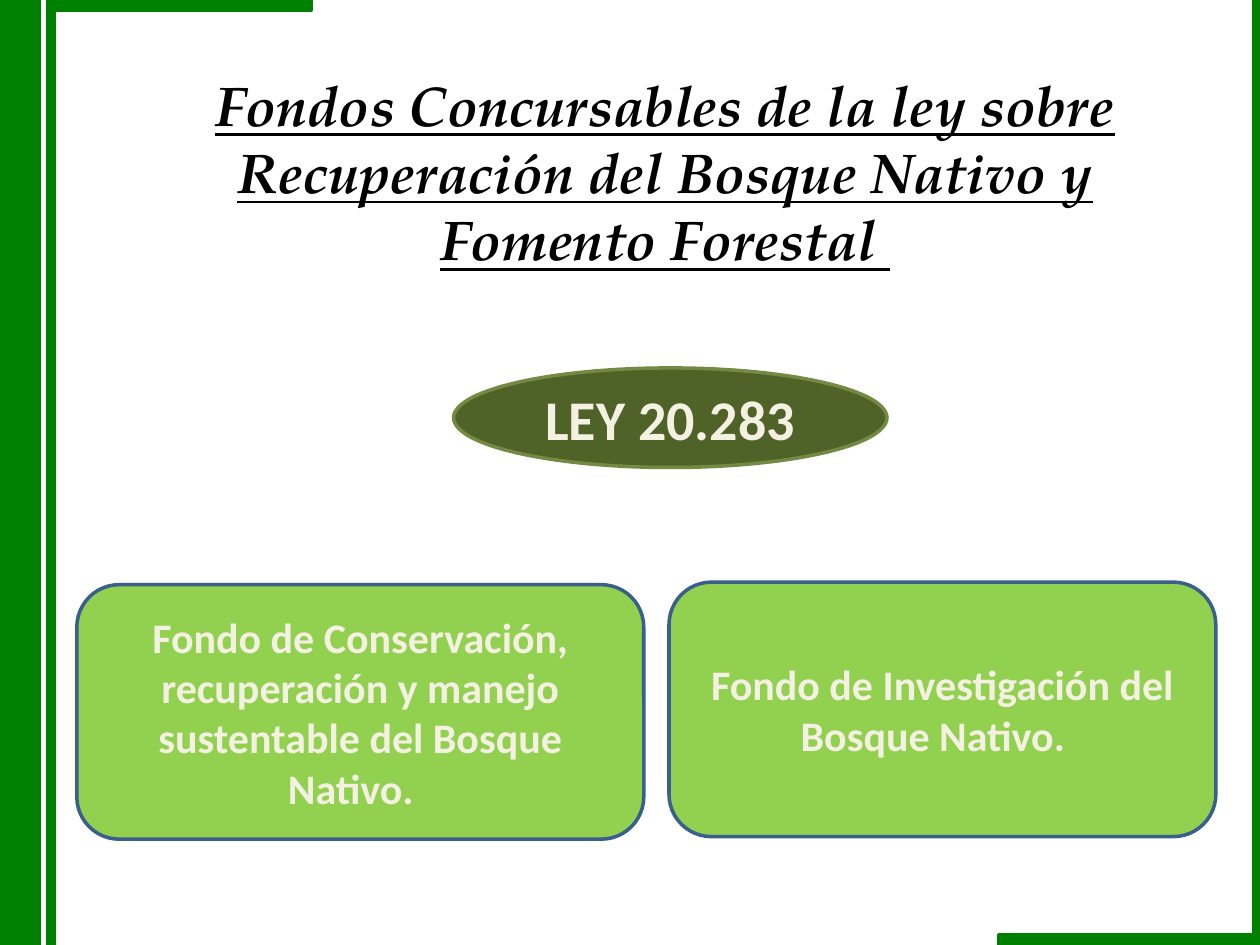
from collections import namedtuple

from pptx import Presentation
from pptx.dml.color import RGBColor
from pptx.enum.shapes import MSO_SHAPE as Preset
from pptx.enum.text import MSO_ANCHOR as Anchor, PP_ALIGN as Align
from pptx.util import Inches, Pt

Box = namedtuple("Box", "left top width height")

COLUMNS, ROWS = 100, 75
CELL = Inches(10) // COLUMNS
COLORS = {
    "frame": "008000",
    "title": "000000",
    "law": "4F6228",
    "law_edge": "738A42",
    "fund": "92D050",
    "fund_edge": "3A5F8C",
    "label": "F4F1E3",
}
TITLE = ("Fondos Concursables de la ley sobre Recuperación del "
         "Bosque Nativo y Fomento Forestal ")
FUNDS = [
    ("Fondo de Conservación, recuperación y manejo sustentable del Bosque Nativo.  ",
     Box(6.1, 46.4, 45, 20.2)),
    ("Fondo de Investigación del Bosque Nativo.  ", Box(53.1, 46.2, 43.4, 20.2)),
]


def color(name):
    """Return the named palette colour."""
    return RGBColor.from_string(COLORS[name])


def emu(box):
    """Turn a box in grid cells into slide lengths."""
    return [round(length * CELL) for length in box]


def add_block(slide, preset, box, fill, edge):
    """Add a filled, outlined shape without shadow."""
    block = slide.shapes.add_shape(preset, *emu(box))
    block.shadow.inherit = False
    block.fill.solid()
    block.fill.fore_color.rgb = color(fill)
    block.line.color.rgb = color(edge)
    block.line.width = Pt(2)
    return block


def write(frame, wording, size, font_name, ink):
    """Write one bold, centred paragraph and return its font."""
    frame.word_wrap = True
    paragraph = frame.paragraphs[0]
    paragraph.text = wording
    paragraph.alignment = Align.CENTER
    font = paragraph.font
    font.name, font.size, font.bold = font_name, Pt(size), True
    font.color.rgb = color(ink)
    return font


def add_frame(slide, box):
    """Draw the green bars along the edges of the box."""
    thin, short, thick = 0.5, 20.4, 0.8
    inner = box.left + 3.8
    right, bottom = box.left + box.width, box.top + box.height
    bars = [
        Box(box.left, box.top, 3.1, box.height),
        Box(inner, box.top, thin, box.height),
        Box(right - thin, box.top, thin, box.height),
        Box(right - short - 0.3, bottom - thick, short, thick),
        Box(inner + thin, box.top, short, thick),
    ]
    for bar in bars:
        add_block(slide, Preset.RECTANGLE, bar, "frame", "frame")


def add_title(slide, box):
    """Place the underlined italic title in the box."""
    title = slide.shapes.add_textbox(*emu(box))
    font = write(title.text_frame, TITLE, 32, "TeX Gyre Pagella", "title")
    font.italic = font.underline = True


def add_label(slide, preset, box, wording, size, fill):
    """Place a shape with a label in its middle."""
    block = add_block(slide, preset, box, fill, f"{fill}_edge")
    block.text_frame.vertical_anchor = Anchor.MIDDLE
    write(block.text_frame, wording, size, "Calibri", "label")


def main():
    """Build and save the slide."""
    deck = Presentation()
    deck.slide_width, deck.slide_height = COLUMNS * CELL, ROWS * CELL
    slide = deck.slides.add_slide(deck.slide_layouts[6])
    add_frame(slide, Box(0, 0, COLUMNS, ROWS))
    add_label(slide, Preset.OVAL, Box(36, 29.2, 34.4, 7.9), "LEY 20.283", 32, "law")
    add_title(slide, Box(9.1, 5.1, 87.4, 17.2))
    for wording, box in FUNDS:
        add_label(slide, Preset.ROUNDED_RECTANGLE, box, wording, 24, "fund")
    deck.save("out.pptx")


if __name__ == "__main__":
    main()
